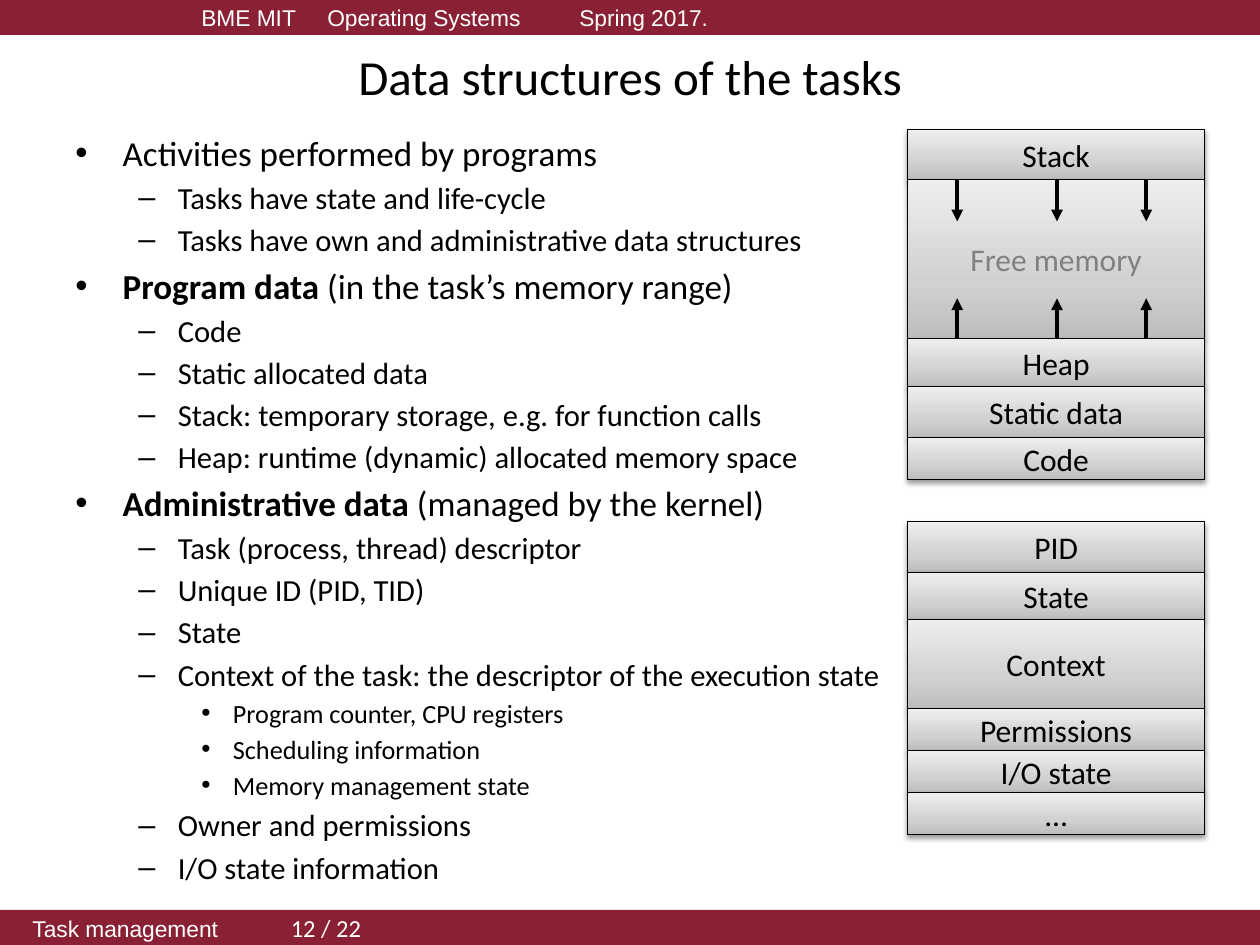
from typing import NamedTuple

from lxml import etree
from pptx import Presentation
from pptx.dml.color import RGBColor
from pptx.enum import shapes, text
from pptx.oxml import parse_xml
from pptx.oxml.ns import nsdecls, qn
from pptx.util import Pt

COLOURS = {"band": "892034", "white": "FFFFFF", "black": "000000", "muted": "808080",
           "dark": "BDBDBD", "mid": "D1D1D1", "light": "EEEEEE"}
PAGE_WIDTH, PAGE_HEIGHT, BAND_HEIGHT = 720, 540, 20
PANEL_LEFT, PANEL_WIDTH = 518.5, 170


class Level(NamedTuple):
    size: float
    margin: float
    hanging: float
    bullet: str


class Item(NamedTuple):
    level: int
    words: str
    bold: str = ""


class Cell(NamedTuple):
    label: str
    height: float
    colour: str = "black"


LEVELS = [Level(20, 27, 27, "•"), Level(17.5, 58.5, 22.5, "–"), Level(15, 90, 18, "•")]

OUTLINE = [
    Item(0, "Activities performed by programs"),
    Item(1, "Tasks have state and life-cycle"),
    Item(1, "Tasks have own and administrative data structures"),
    Item(0, " (in the task’s memory range)", "Program data"),
    Item(1, "Code"),
    Item(1, "Static allocated data"),
    Item(1, "Stack: temporary storage, e.g. for function calls"),
    Item(1, "Heap: runtime (dynamic) allocated memory space"),
    Item(0, "(managed by the kernel)", "Administrative data "),
    Item(1, "Task (process, thread) descriptor"),
    Item(1, "Unique ID (PID, TID)"),
    Item(1, "State"),
    Item(1, "Context of the task: the descriptor of the execution state"),
    Item(2, "Program counter, CPU registers"),
    Item(2, "Scheduling information"),
    Item(2, "Memory management state"),
    Item(1, "Owner and permissions"),
    Item(1, "I/O state information"),
]

MEMORY = [Cell("Stack", 28.5), Cell("Free memory", 91, "muted"), Cell("Heap", 27.5),
          Cell("Static data", 29), Cell("Code", 24)]
DESCRIPTOR = [Cell("PID", 29), Cell("State", 27), Cell("Context", 51),
              Cell("Permissions", 24), Cell("I/O state", 24), Cell("…", 24)]


def rgb(name: str) -> RGBColor:
    return RGBColor.from_string(COLOURS[name])


def set_font(font, size: float, colour: str, name: str = "Calibri") -> None:
    font.size, font.name = Pt(size), name
    font.color.rgb = rgb(colour)


def add_rectangle(page, left: float, top: float, width: float, height: float):
    box = page.shapes.add_shape(shapes.MSO_SHAPE.RECTANGLE,
                                Pt(left), Pt(top), Pt(width), Pt(height))
    box.shadow.inherit = False
    box.text_frame.vertical_anchor = text.MSO_ANCHOR.MIDDLE
    return box


def add_band(page, top: float, words: str, indent: float):
    """Draw a full-width strip and return its paragraph."""
    band = add_rectangle(page, 0, top, PAGE_WIDTH, BAND_HEIGHT)
    band.fill.solid()
    band.fill.fore_color.rgb = rgb("band")
    band.line.fill.background()
    para = band.text_frame.paragraphs[0]
    para.alignment = text.PP_ALIGN.LEFT
    para._p.get_or_add_pPr().set("marL", str(Pt(indent)))
    set_font(para.font, 13, "white", "Arial")
    para.add_run().text = words
    return para


def add_outline(page, items: list[Item]) -> None:
    frame = page.shapes.add_textbox(Pt(36), Pt(71.5), Pt(478), Pt(420)).text_frame
    frame.word_wrap = True
    for index, item in enumerate(items):
        level = LEVELS[item.level]
        para = frame.add_paragraph() if index else frame.paragraphs[0]
        para.level = item.level
        if index:
            para.space_before = Pt(0.18 * level.size)
        props = para._p.get_or_add_pPr()
        props.set("marL", str(Pt(level.margin)))
        props.set("indent", str(-Pt(level.hanging)))
        etree.SubElement(props, qn("a:buFont"), typeface="Arial")
        etree.SubElement(props, qn("a:buChar"), char=level.bullet)
        set_font(para.font, level.size, "black")
        if item.bold:
            span = para.add_run()
            span.text, span.font.bold = item.bold, True
        para.add_run().text = item.words


def shade(box) -> None:
    """Give a cell its three-stop gradient and soft shadow."""
    stops = "".join(f'<a:gs pos="{place * 1000}"><a:srgbClr val="{COLOURS[name]}"/></a:gs>'
                    for place, name in ((0, "dark"), (35, "mid"), (100, "light")))
    props = box._element.spPr
    props.find(qn("a:prstGeom")).addnext(parse_xml(
        f'<a:gradFill {nsdecls("a")} rotWithShape="1"><a:gsLst>{stops}</a:gsLst>'
        '<a:lin ang="16200000" scaled="0"/></a:gradFill>'))
    props.find(qn("a:effectLst")).append(parse_xml(
        f'<a:outerShdw {nsdecls("a")} blurRad="{Pt(3.1)}" dist="{Pt(1.6)}" dir="5400000" '
        f'rotWithShape="0"><a:srgbClr val="{COLOURS["black"]}"><a:alpha val="38000"/>'
        '</a:srgbClr></a:outerShdw>'))


def add_panel(page, top: float, cells: list[Cell]) -> None:
    for cell in cells:
        box = add_rectangle(page, PANEL_LEFT, top, PANEL_WIDTH, cell.height)
        shade(box)
        box.line.color.rgb = rgb("black")
        box.line.width = Pt(0.75)
        para = box.text_frame.paragraphs[0]
        para.alignment = text.PP_ALIGN.CENTER
        set_font(para.font, 18, cell.colour)
        para.add_run().text = cell.label
        top += cell.height


def add_arrow(page, x: float, start: float, end: float) -> None:
    arrow = page.shapes.add_connector(shapes.MSO_CONNECTOR.STRAIGHT,
                                      Pt(x), Pt(start), Pt(x), Pt(end))
    arrow.line.color.rgb = rgb("black")
    arrow.line.width = Pt(2.25)
    etree.SubElement(arrow.line._get_or_add_ln(), qn("a:tailEnd"), type="triangle")
    etree.SubElement(arrow._element.spPr, qn("a:effectLst"))


def add_title(page, words: str) -> None:
    title = page.shapes.title
    title.left, title.top, title.width, title.height = Pt(36), Pt(21.5), Pt(648), Pt(44)
    title.text_frame.vertical_anchor = text.MSO_ANCHOR.MIDDLE
    para = title.text_frame.paragraphs[0]
    para.alignment = text.PP_ALIGN.CENTER
    set_font(para.font, 28, "black")
    para.add_run().text = words


def main() -> None:
    deck = Presentation()
    deck.slide_width, deck.slide_height = Pt(PAGE_WIDTH), Pt(PAGE_HEIGHT)
    page = deck.slides.add_slide(deck.slide_layouts[5])

    add_band(page, 0, "BME MIT\tOperating Systems\tSpring 2017.", 108)
    footer = add_band(page, PAGE_HEIGHT - BAND_HEIGHT, "Task management\t\t ", 11.5)
    number = footer.add_run()
    number.text = "12 / 22"
    set_font(number.font, 14, "white")

    add_title(page, "Data structures of the tasks")
    add_outline(page, OUTLINE)
    add_panel(page, 74, MEMORY)
    for x in (547, 604, 655):
        add_arrow(page, x, 193.5, 170.5)
        add_arrow(page, x, 102.5, 126.5)
    add_panel(page, 298, DESCRIPTOR)
    deck.save("out.pptx")


if __name__ == "__main__":
    main()
